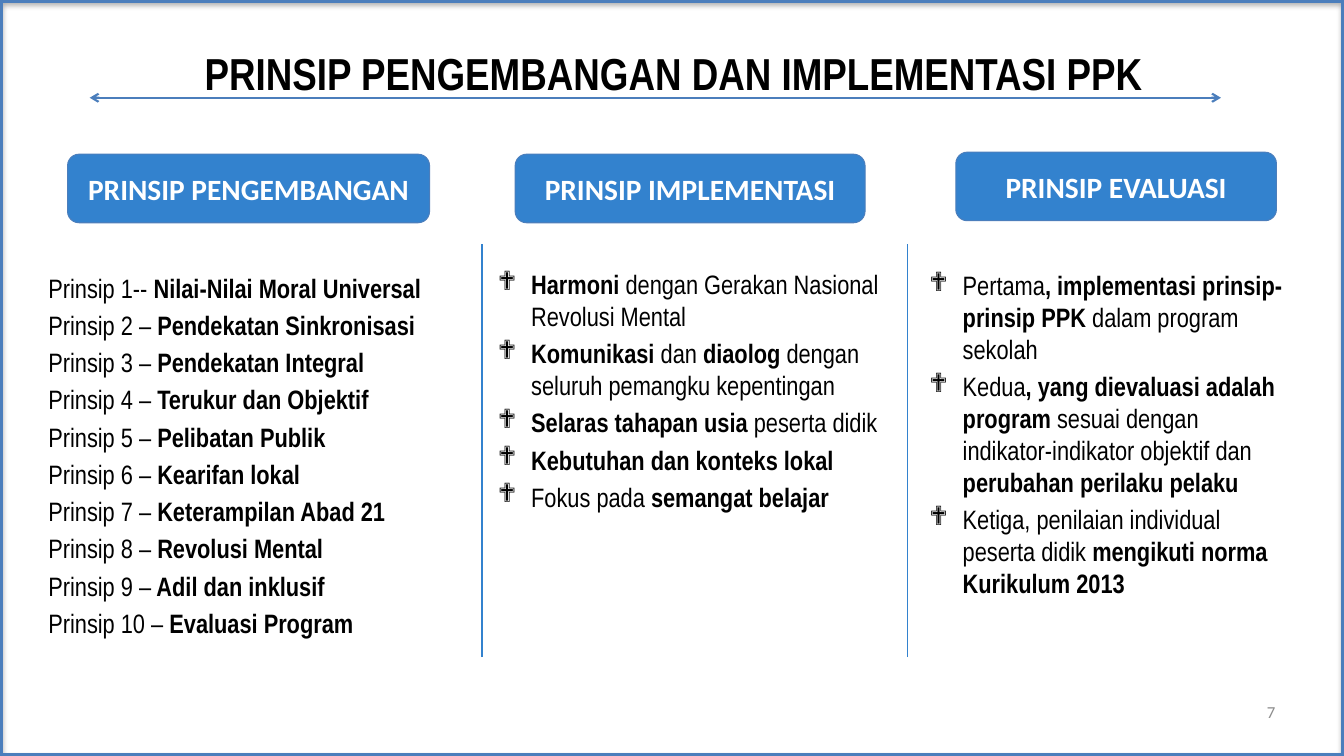
import pptx
import pptx.util
import pptx.dml.color
import pptx.enum.shapes
import pptx.enum.text
import pptx.oxml
import pptx.oxml.ns
from dataclasses import dataclass

Inches = pptx.util.Inches
Pt = pptx.util.Pt
Align = pptx.enum.text.PP_ALIGN
Anchor = pptx.enum.text.MSO_ANCHOR
Kind = pptx.enum.shapes.MSO_SHAPE
NS = pptx.oxml.ns.nsdecls("a")


@dataclass(frozen=True)
class Theme:
    edge: str = "4B7EBC"
    blue: str = "3382CE"
    white: str = "FFFFFF"
    black: str = "000000"
    gray: str = "8C8C8C"
    narrow: str = "Arial Narrow"
    plain: str = "Calibri"
    title: float = 32
    label: float = 21
    body: float = 19
    small: float = 12


THEME = Theme()

RULES = [
    "Prinsip 1-- *Nilai-Nilai Moral Universal",
    "Prinsip 2 –* Pendekatan Sinkronisasi",
    "Prinsip 3 –* Pendekatan Integral",
    "Prinsip 4 –* Terukur dan Objektif",
    "Prinsip 5 –* Pelibatan Publik",
    "Prinsip 6 –* Kearifan lokal",
    "Prinsip 7 –* Keterampilan Abad 21",
    "Prinsip 8 –* Revolusi Mental",
    "Prinsip 9 –* Adil dan inklusif",
    "Prinsip 10 –* Evaluasi Program",
]
STEPS = [
    "*Harmoni *dengan Gerakan Nasional Revolusi Mental",
    "*Komunikasi* dan *diaolog *dengan seluruh pemangku kepentingan",
    "*Selaras tahapan usia *peserta didik",
    "*Kebutuhan dan konteks lokal",
    "Fokus pada *semangat belajar",
]
CHECKS = [
    "Pertama*, implementasi prinsip-prinsip PPK *dalam program sekolah",
    "Kedua*, yang dievaluasi adalah program *sesuai dengan "
    "indikator-indikator objektif dan *perubahan perilaku pelaku",
    "Ketiga, penilaian individual peserta didik *mengikuti norma Kurikulum 2013",
]


def paint(hue):
    return pptx.dml.color.RGBColor.from_string(hue)


def place(box):
    return [Inches(size) for size in box]


def stroke(line, hue, width):
    line.color.rgb = paint(hue)
    line.width = Pt(width)


def write(para, text, font, size, hue):
    for turn, part in enumerate(text.split("*")):
        if part:
            run = para.add_run()
            run.text = part
            run.font.name = font
            run.font.size = Pt(size)
            run.font.bold = turn % 2 == 1
            run.font.color.rgb = paint(hue)


def setup(frame, anchor, pad):
    frame.word_wrap = True
    frame.vertical_anchor = anchor
    frame.margin_left = frame.margin_right = Inches(pad)
    frame.margin_top = frame.margin_bottom = Inches(pad / 2)
    return frame


def add_text(slide, box, anchor=Anchor.TOP, pad=0.1):
    return setup(slide.shapes.add_textbox(*place(box)).text_frame, anchor, pad)


def add_mark(para):
    props = para._p.get_or_add_pPr()
    props.set("marL", str(Inches(0.34)))
    props.set("indent", str(Inches(-0.33)))
    props.append(pptx.oxml.parse_xml(f'<a:buFont {NS} typeface="Wingdings"/>'))
    props.append(pptx.oxml.parse_xml(f'<a:buChar {NS} char="❖"/>'))


def add_list(slide, box, items, pad=0.1, marks=True):
    frame = add_text(slide, box, pad=pad)
    for spot, item in enumerate(items):
        para = frame.add_paragraph() if spot else frame.paragraphs[0]
        para.space_before = Pt(THEME.body * 0.2)
        if marks:
            add_mark(para)
        write(para, item, THEME.narrow, THEME.body, THEME.black)


def add_label(slide, box, text):
    shape = slide.shapes.add_shape(Kind.ROUNDED_RECTANGLE, *place(box))
    shape.shadow.inherit = False
    shape.fill.solid()
    shape.fill.fore_color.rgb = paint(THEME.blue)
    stroke(shape.line, THEME.edge, 0.75)
    para = setup(shape.text_frame, Anchor.MIDDLE, 0.1).paragraphs[0]
    para.alignment = Align.CENTER
    write(para, "*" + text, THEME.plain, THEME.label, THEME.white)


def add_line(slide, ends, hue, width, heads=False):
    line = slide.shapes.add_connector(
        pptx.enum.shapes.MSO_CONNECTOR.STRAIGHT, *place(ends))
    stroke(line.line, hue, width)
    if heads:
        for end in ("headEnd", "tailEnd"):
            line.line._get_or_add_ln().append(
                pptx.oxml.parse_xml(f'<a:{end} {NS} type="arrow"/>'))
    line._element.spPr.append(pptx.oxml.parse_xml(f"<a:effectLst {NS}/>"))


def add_frame(slide, box):
    shape = slide.shapes.add_shape(Kind.RECTANGLE, *place(box))
    shape.fill.background()
    stroke(shape.line, THEME.edge, 4.5)
    shape._element.spPr.append(pptx.oxml.parse_xml(
        f'<a:effectLst {NS}><a:outerShdw blurRad="{Pt(3.1)}" dist="{Pt(1.8)}" '
        f'dir="5400000" rotWithShape="0"><a:srgbClr val="{THEME.black}">'
        '<a:alpha val="35000"/></a:srgbClr></a:outerShdw></a:effectLst>'))


def add_title(slide, box, text):
    para = add_text(slide, box, Anchor.MIDDLE).paragraphs[0]
    para.alignment = Align.CENTER
    para.line_spacing = 1.2
    write(para, "*" + text, THEME.narrow, THEME.title, THEME.black)


def add_count(slide, box, text):
    para = add_text(slide, box, Anchor.MIDDLE, 0.13).paragraphs[0]
    para.alignment = Align.RIGHT
    write(para, text, THEME.plain, THEME.small, THEME.gray)


def main():
    deck = pptx.Presentation()
    deck.slide_width, deck.slide_height = Inches(13.33), Inches(7.5)
    slide = deck.slides.add_slide(deck.slide_layouts[6])

    add_frame(slide, (0, 0, 13.33, 7.5))
    add_line(slide, (0.89, 0.97, 12.11, 0.97), THEME.edge, 1.5, heads=True)
    add_count(slide, (9.67, 6.86, 3.11, 0.4), "7")
    add_title(slide, (0.56, 0.31, 12.25, 0.72),
              "PRINSIP PENGEMBANGAN DAN IMPLEMENTASI PPK")

    add_list(slide, (0.33, 2.62, 4.44, 4.07), RULES, pad=0.15, marks=False)
    add_list(slide, (4.83, 2.61, 4.22, 3.34), STEPS)
    add_list(slide, (9.11, 2.62, 3.79, 4.1), CHECKS)

    for left, top, width, text in (
        (0.67, 1.53, 3.59, "PRINSIP PENGEMBANGAN"),
        (5.11, 1.53, 3.47, "PRINSIP IMPLEMENTASI"),
        (9.48, 1.51, 3.18, "PRINSIP EVALUASI"),
    ):
        add_label(slide, (left, top, width, 0.68), text)
    for left in (4.78, 9):
        add_line(slide, (left, 6.52, left, 2.42), THEME.blue, 1)

    deck.save("out.pptx")


if __name__ == "__main__":
    main()
